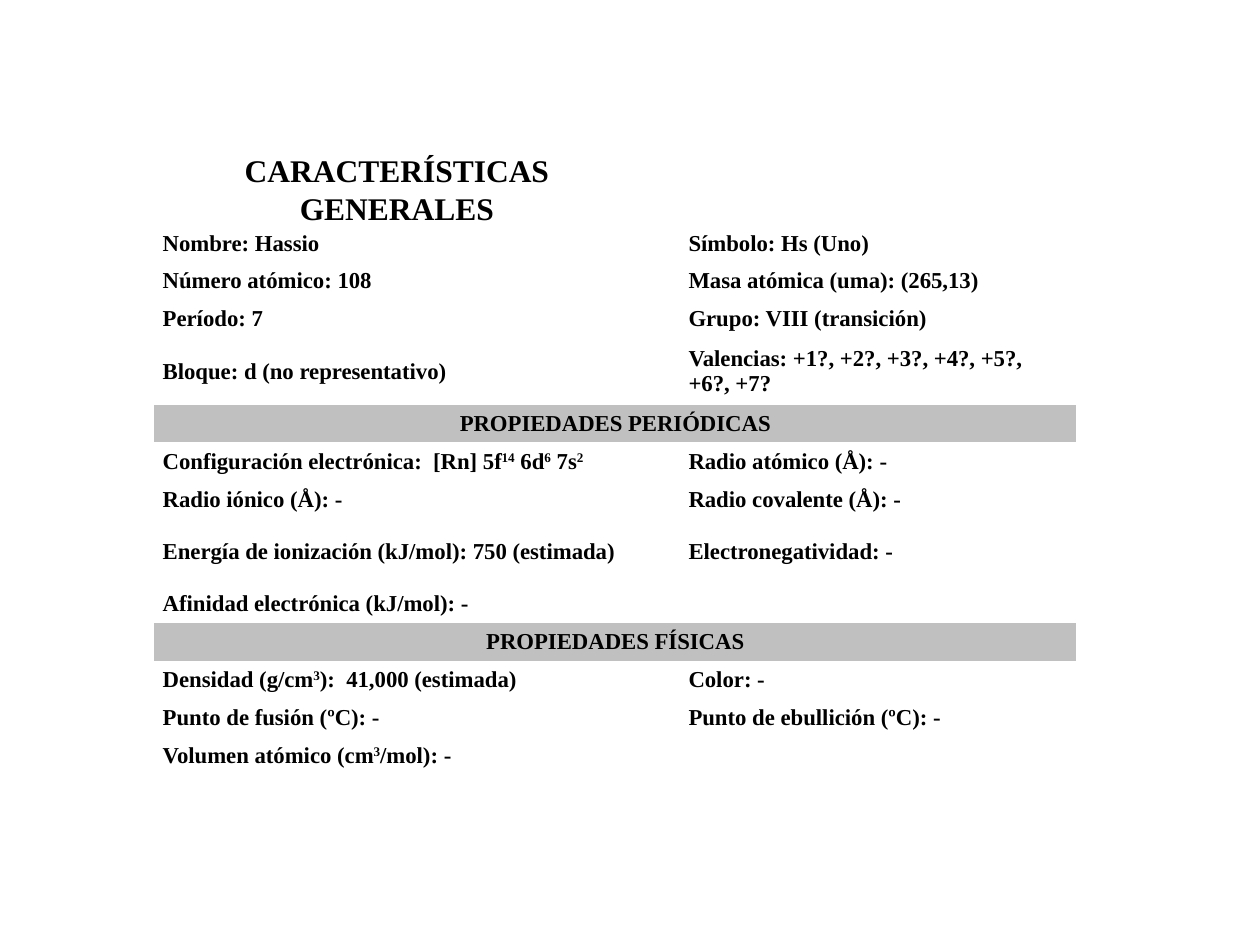
from lxml import etree
from pptx import Presentation
from pptx.dml.color import RGBColor
from pptx.enum.text import MSO_ANCHOR, MSO_AUTO_SIZE, PP_ALIGN
from pptx.oxml.ns import qn
from pptx.util import Pt

CENTER, LEFT = PP_ALIGN.CENTER, PP_ALIGN.LEFT
TOP, MIDDLE = MSO_ANCHOR.TOP, MSO_ANCHOR.MIDDLE
NO_AUTOFIT = MSO_AUTO_SIZE.NONE

FONT = "Times New Roman"
BLACK, GREY = "000000", "C0C0C0"
NO_GRID_STYLE = "{2D5ABB26-0587-4C30-8999-92F81FD0307C}"

HEADING = "CARACTERÍSTICAS GENERALES"
PROPERTIES = [
    ("Nombre: Hassio", "Símbolo: Hs (Uno)"),
    ("Número atómico: 108", "Masa atómica (uma): (265,13)"),
    ("Período: 7", "Grupo: VIII (transición)"),
    ("Bloque: d (no representativo)", "Valencias: +1?, +2?, +3?, +4?, +5?, +6?, +7?"),
    ("PROPIEDADES PERIÓDICAS",),
    ("Configuración electrónica:  [Rn] 5f^14^ 6d^6^ 7s^2^", "Radio atómico (Å): -"),
    ("Radio iónico (Å): -", "Radio covalente (Å): -"),
    ("Energía de ionización (kJ/mol): 750 (estimada)", "Electronegatividad: -"),
    ("Afinidad electrónica (kJ/mol): -", ""),
    ("PROPIEDADES FÍSICAS",),
    ("Densidad (g/cm^3^):  41,000 (estimada)", "Color: -"),
    ("Punto de fusión (ºC): -", "Punto de ebullición (ºC): -"),
    ("Volumen atómico (cm^3^/mol): -", ""),
]
COLUMN_WIDTHS = (300.5, 226.5)
ROW_HEIGHT, TALL_ROW_HEIGHT = 21.7, 37.9
TALL_ROWS = (3, 7)


def rgb(value):
    """Turn a hex string into a colour."""
    return RGBColor.from_string(value)


def write(frame, text, size=13, align=LEFT, color=BLACK):
    """Write bold text, raising every part enclosed in carets."""
    paragraph = frame.paragraphs[0]
    paragraph.alignment = align
    for index, part in enumerate(text.split("^")):
        if not part:
            continue
        run = paragraph.add_run()
        run.text = part
        run.font.name, run.font.size, run.font.bold = FONT, Pt(size), True
        run.font.color.rgb = rgb(color)
        if index % 2:
            run.font._element.set("baseline", "30000")
    if not text:
        etree.SubElement(paragraph._p, qn("a:endParaRPr"), sz=str(size * 100))


def add_heading(slide):
    """Place the slide title above the left column."""
    heading = slide.shapes.title
    heading.left, heading.top, heading.width, heading.height = Pt(76.3), Pt(82.8), Pt(301), Pt(28.8)
    frame = heading.text_frame
    frame.word_wrap, frame.auto_size, frame.vertical_anchor = True, NO_AUTOFIT, TOP
    frame.margin_left = frame.margin_right = Pt(7.2)
    frame.margin_top = frame.margin_bottom = Pt(3.6)
    write(frame, HEADING, size=18, align=CENTER)


def add_properties(slide):
    """Build the property table with its shaded section rows."""
    heights = [TALL_ROW_HEIGHT if row in TALL_ROWS else ROW_HEIGHT for row in range(len(PROPERTIES))]
    table = slide.shapes.add_table(
        len(PROPERTIES), len(COLUMN_WIDTHS), Pt(88), Pt(128.2),
        Pt(sum(COLUMN_WIDTHS)), Pt(sum(heights))).table
    table.first_row = table.horz_banding = False
    table._tbl.tblPr.find(qn("a:tableStyleId")).text = NO_GRID_STYLE
    for column, width in zip(table.columns, COLUMN_WIDTHS):
        column.width = Pt(width)
    for row, (entries, height) in enumerate(zip(PROPERTIES, heights)):
        table.rows[row].height = Pt(height)
        is_section = len(entries) == 1
        if is_section:
            table.cell(row, 0).merge(table.cell(row, 1))
        for column, entry in enumerate(entries):
            cell = table.cell(row, column)
            cell.vertical_anchor = MIDDLE
            cell.margin_left = cell.margin_right = Pt(5)
            cell.margin_top = cell.margin_bottom = Pt(2.6)
            if is_section:
                cell.fill.solid()
                cell.fill.fore_color.rgb = rgb(GREY)
            else:
                cell.fill.background()
            write(cell.text_frame, entry, align=CENTER if is_section else LEFT)


def main():
    """Build and save the slide."""
    deck = Presentation()
    deck.slide_width, deck.slide_height = Pt(720), Pt(540)
    slide = deck.slides.add_slide(deck.slide_layouts[5])
    add_heading(slide)
    add_properties(slide)
    deck.save("out.pptx")


if __name__ == "__main__":
    main()
